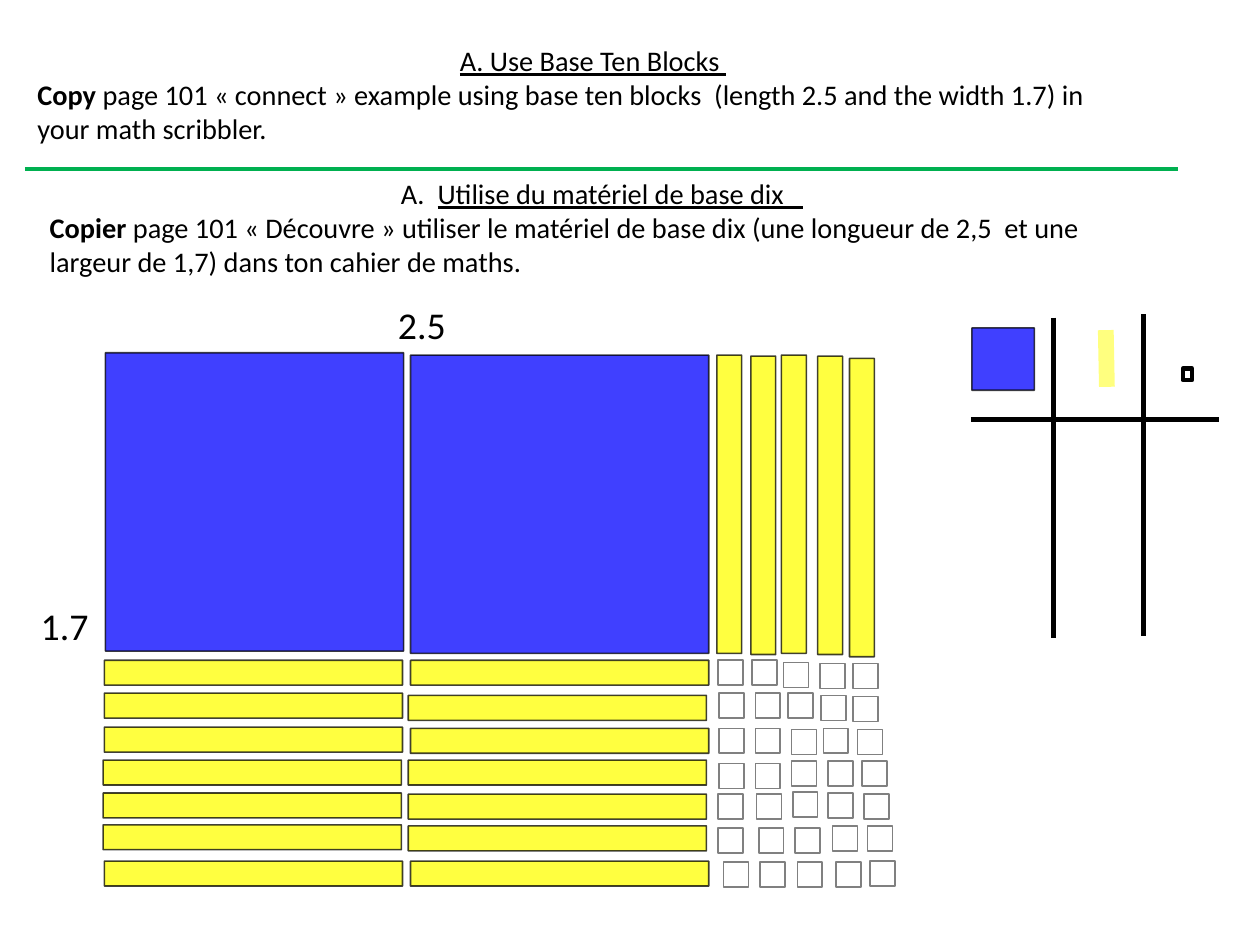
from lxml import etree
from pptx import Presentation
from pptx.dml.color import RGBColor
from pptx.enum.shapes import MSO_CONNECTOR, MSO_SHAPE
from pptx.enum.text import MSO_ANCHOR, MSO_AUTO_SIZE, PP_ALIGN
from pptx.oxml.ns import qn
from pptx.util import Inches, Pt

RECTANGLE = MSO_SHAPE.RECTANGLE
STRAIGHT = MSO_CONNECTOR.STRAIGHT
TOP = MSO_ANCHOR.TOP
NO_AUTOFIT = MSO_AUTO_SIZE.NONE
CENTER, LEFT = PP_ALIGN.CENTER, PP_ALIGN.LEFT

COLORS = {
    "black": "000000",
    "white": "FFFFFF",
    "blue": "0000FF",
    "yellow": "FFFF00",
    "gray": "808080",
    "green": "00B050",
}
FLAT = 2.63
UNIT = 0.22

FLATS = [(0.93, 3.11), (3.62, 3.13)]
UPRIGHT_RODS = [(6.32, 3.13), (6.62, 3.14), (6.89, 3.13), (7.21, 3.14), (7.49, 3.16)]
LEVEL_RODS = [
    (0.92, 5.82), (0.92, 6.11), (0.92, 6.41), (0.91, 6.7), (0.91, 6.99), (0.91, 7.27), (0.92, 7.59),
    (3.62, 5.82), (3.6, 6.13), (3.62, 6.42), (3.6, 6.7), (3.6, 7), (3.6, 7.28), (3.62, 7.59),
]
UNIT_ROWS = [
    ([6.33, 6.63, 6.91, 7.23, 7.52], [5.82, 5.82, 5.84, 5.85, 5.85]),
    ([6.34, 6.66, 6.95, 7.24, 7.52], [6.11, 6.11, 6.11, 6.13, 6.14]),
    ([6.34, 6.66, 6.98, 7.26, 7.56], [6.42, 6.42, 6.43, 6.42, 6.43]),
    ([6.34, 6.66, 6.98, 7.3, 7.6], [6.73, 6.73, 6.71, 6.71, 6.71]),
    ([6.33, 6.67, 6.99, 7.3, 7.62], [7, 7, 6.98, 6.99, 7]),
    ([6.33, 6.69, 7.01, 7.34, 7.65], [7.3, 7.3, 7.3, 7.28, 7.28]),
    ([6.38, 6.7, 7.03, 7.37, 7.67], [7.6, 7.6, 7.6, 7.6, 7.59]),
]
CHART_LINES = [
    (8.56, 3.7, 10.75, 3.7),
    (10.08, 2.77, 10.08, 5.61),
    (9.29, 2.8, 9.29, 5.62),
]


class BlockSlide:
    font = "Calibri"

    def __init__(self, prs):
        self.s = prs.slides.add_slide(prs.slide_layouts[5])

    def color(self, name):
        return RGBColor.from_string(COLORS[name])

    def fade(self, sp, percent):
        for clr in sp._element.spPr.iter(qn("a:srgbClr")):
            etree.SubElement(clr, qn("a:alpha"), val=str(percent * 1000))

    def block(self, left, top, width, height, fill=None, line="black", weight=1, opacity=100):
        sp = self.s.shapes.add_shape(
            RECTANGLE, Inches(left), Inches(top), Inches(width), Inches(height))
        sp.shadow.inherit = False
        if fill:
            sp.fill.solid()
            sp.fill.fore_color.rgb = self.color(fill)
        else:
            sp.fill.background()
        sp.line.color.rgb = self.color(line)
        sp.line.width = Pt(weight)
        if opacity < 100:
            self.fade(sp, opacity)

    def line(self, x1, y1, x2, y2, color="black", weight=3, opacity=100):
        sp = self.s.shapes.add_connector(
            STRAIGHT, Inches(x1), Inches(y1), Inches(x2), Inches(y2))
        sp.line.color.rgb = self.color(color)
        sp.line.width = Pt(weight)
        etree.SubElement(sp._element.spPr, qn("a:effectLst"))
        if opacity < 100:
            self.fade(sp, opacity)

    def paragraph(self, p, runs, size, align=LEFT):
        p.alignment = align
        p.font.name = self.font
        p.font.size = Pt(size)
        p.font.color.rgb = self.color("black")
        for text, style in runs:
            r = p.add_run()
            r.text = text
            if style == "bold":
                r.font.bold = True
            elif style == "underline":
                r.font.underline = True

    def text_box(self, left, top, width, height):
        return self.s.shapes.add_textbox(
            Inches(left), Inches(top), Inches(width), Inches(height))

    def label(self, left, top, width, text):
        sp = self.text_box(left, top, width, 0.5)
        sp.text_frame.word_wrap = True
        self.paragraph(sp.text_frame.paragraphs[0], [(text, None)], 24)

    def task(self, sp, heading, instruction):
        tf = sp.text_frame
        tf.word_wrap = True
        tf.auto_size = NO_AUTOFIT
        tf.vertical_anchor = TOP
        self.paragraph(tf.paragraphs[0], heading, 18, CENTER)
        self.paragraph(tf.add_paragraph(), instruction, 18)

    def title_task(self, left, top, width, height, heading, instruction):
        sp = self.s.shapes.title
        sp.left, sp.top = Inches(left), Inches(top)
        sp.width, sp.height = Inches(width), Inches(height)
        self.task(sp, heading, instruction)


def main():
    prs = Presentation()
    prs.slide_width, prs.slide_height = Inches(11.11), Inches(8.33)
    slide = BlockSlide(prs)

    slide.title_task(
        0.23, 0.33, 9.94, 1.01,
        [(" ", None), ("A. Use Base Ten Blocks ", "underline")],
        [("Copy", "bold"),
         (" page 101 « connect » example using base ten blocks  (length 2.5 and the width 1.7)"
          " in your math scribbler.", None)])
    slide.task(
        slide.text_box(0.34, 1.5, 9.94, 1.01),
        [("A.  ", None), ("Utilise du matériel de base dix   ", "underline")],
        [("Copier", "bold"),
         (" page 101 « Découvre » utiliser le matériel de base dix (une longueur de 2,5  et une"
          " largeur de 1,7) dans ton cahier de maths.", None)])
    slide.line(0.22, 1.49, 10.39, 1.49, "green")

    for x, y in FLATS:
        slide.block(x, y, FLAT, FLAT, "blue", opacity=75)
    for x, y in UPRIGHT_RODS:
        slide.block(x, y, UNIT, FLAT, "yellow", opacity=75)
    for x, y in LEVEL_RODS:
        slide.block(x, y, FLAT, UNIT, "yellow", opacity=75)
    for lefts, tops in UNIT_ROWS:
        for x, y in zip(lefts, tops):
            slide.block(x, y, UNIT, UNIT, "white", "gray")

    slide.label(0.26, 5.26, 1.11, "1.7")
    slide.label(3.41, 2.61, 1.08, "2.5")

    slide.block(8.57, 2.89, 0.55, 0.55, "blue", opacity=75)
    slide.line(9.75, 2.91, 9.76, 3.41, "yellow", 10, 50)
    slide.block(10.43, 3.25, 0.08, 0.1, weight=3)
    for ends in CHART_LINES:
        slide.line(*ends)

    prs.save("out.pptx")


if __name__ == "__main__":
    main()
